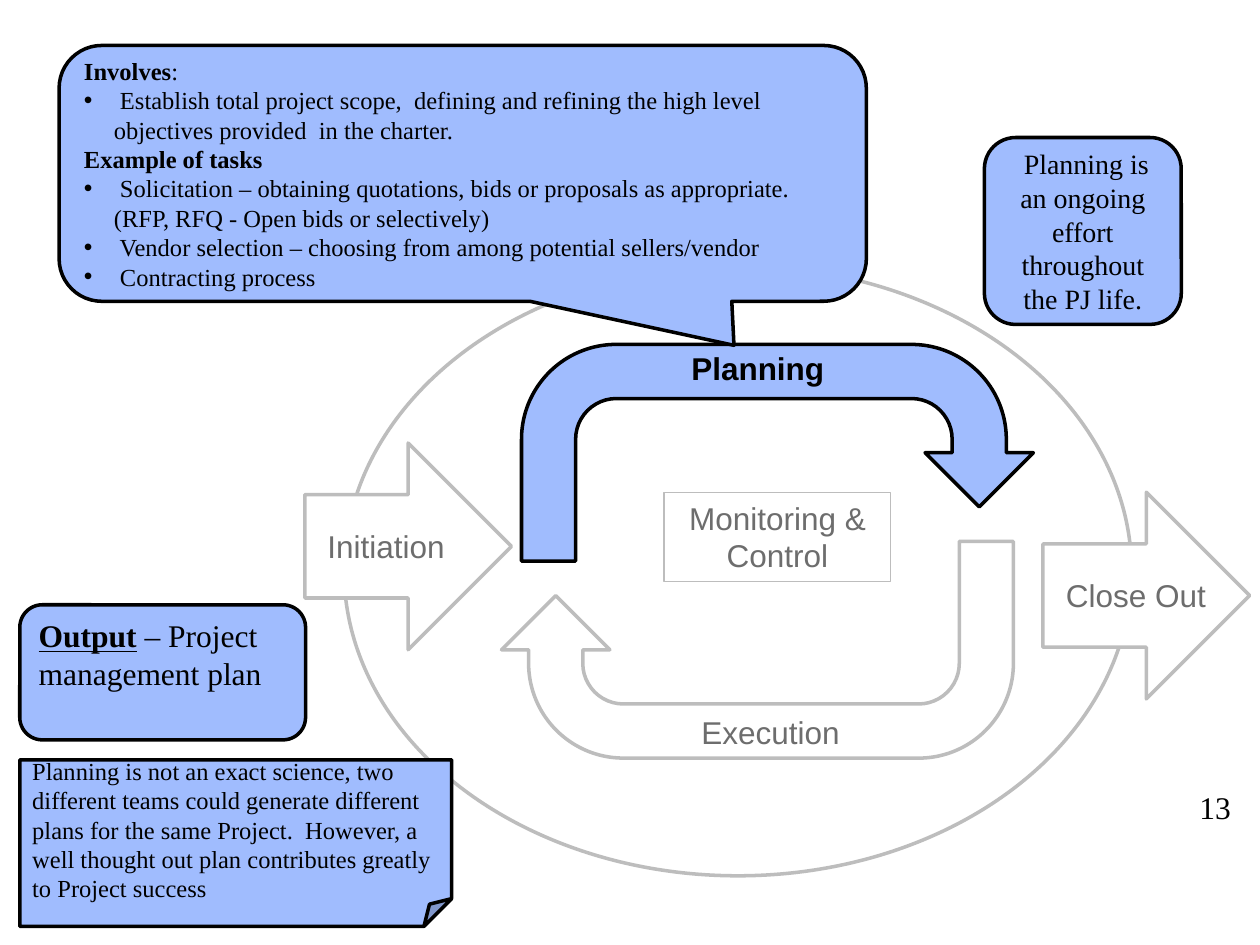
"""Builds the project planning phase slide."""
from dataclasses import dataclass

from lxml import etree
from pptx import Presentation
from pptx.dml.color import RGBColor
from pptx.enum.shapes import MSO_SHAPE
from pptx.enum.text import MSO_ANCHOR, PP_ALIGN
from pptx.oxml.ns import qn
from pptx.util import Pt

ELLIPSE = MSO_SHAPE.OVAL
BRACKETS = MSO_SHAPE.DOUBLE_BRACKET
U_TURN = MSO_SHAPE.U_TURN_ARROW
RIGHT_ARROW = MSO_SHAPE.RIGHT_ARROW
RECTANGLE = MSO_SHAPE.RECTANGLE
ROUNDED = MSO_SHAPE.ROUNDED_RECTANGLE
CALLOUT = MSO_SHAPE.ROUNDED_RECTANGULAR_CALLOUT
FOLDED = MSO_SHAPE.FOLDED_CORNER
TOP, MIDDLE = MSO_ANCHOR.TOP, MSO_ANCHOR.MIDDLE
LEFT, CENTER = PP_ALIGN.LEFT, PP_ALIGN.CENTER


@dataclass(frozen=True)
class Theme:
    highlight: RGBColor = RGBColor(0xA0, 0xBC, 0xFE)
    white: RGBColor = RGBColor(0xFF, 0xFF, 0xFF)
    black: RGBColor = RGBColor(0, 0, 0)
    muted_line: RGBColor = RGBColor(0xBD, 0xBD, 0xBD)
    muted_text: RGBColor = RGBColor(0x6D, 0x6D, 0x6D)
    label_font: str = "Arial"
    note_font: str = "Times New Roman"
    large: int = 18
    medium: int = 16
    small: int = 14
    outline: float = 2
    thin_outline: float = 0.75
    bullet_indent: float = 17.1


THEME = Theme()


def add_outline(slide, kind, box, fill, line, width=THEME.outline):
    shape = slide.shapes.add_shape(kind, *map(Pt, box))
    shape.shadow.inherit = False
    if fill is None:
        shape.fill.background()
    else:
        shape.fill.solid()
        shape.fill.fore_color.rgb = fill
    if line is None:
        shape.line.fill.background()
    else:
        shape.line.color.rgb = line
        shape.line.width = Pt(width)
    return shape


def add_muted(slide, kind, box):
    return add_outline(slide, kind, box, THEME.white, THEME.muted_line)


def add_highlighted(slide, kind, box):
    return add_outline(slide, kind, box, THEME.highlight, THEME.black)


def add_run(paragraph, text, size, font, color, bold=False, underline=False):
    run = paragraph.add_run()
    run.text = text
    run.font.size = Pt(size)
    run.font.name = font
    run.font.color.rgb = color
    run.font.bold = bold
    run.font.underline = underline


def start_text(shape, anchor=TOP, align=LEFT):
    frame = shape.text_frame
    frame.word_wrap = True
    frame.vertical_anchor = anchor
    paragraph = frame.paragraphs[0]
    paragraph.alignment = align
    return paragraph


def add_label(slide, text, box, color=THEME.muted_text, bold=False):
    label = slide.shapes.add_textbox(*map(Pt, box))
    add_run(start_text(label), text, THEME.large, THEME.label_font, color, bold)


def add_note(slide, kind, box, runs, size, align=LEFT):
    note = add_highlighted(slide, kind, box)
    paragraph = start_text(note, MIDDLE, align)
    for text, emphasis in runs:
        add_run(paragraph, text, size, THEME.note_font, THEME.black, emphasis, emphasis)
    return note


def set_bullet(paragraph):
    properties = paragraph._p.get_or_add_pPr()
    indent = Pt(THEME.bullet_indent)
    properties.set("marL", str(indent))
    properties.set("indent", str(-indent))
    etree.SubElement(properties, qn("a:buFont"), typeface=THEME.label_font)
    etree.SubElement(properties, qn("a:buChar"), char="•")


def add_callout(slide, box, lines):
    callout = add_highlighted(slide, CALLOUT, box)
    for index, value in enumerate((0.336, 0.672, 0.167)):
        callout.adjustments[index] = value
    first = start_text(callout, MIDDLE)
    for index, (bulleted, runs) in enumerate(lines):
        paragraph = first if index == 0 else callout.text_frame.add_paragraph()
        paragraph.alignment = LEFT
        if bulleted:
            set_bullet(paragraph)
        for text, bold in runs:
            add_run(paragraph, text, THEME.small, THEME.note_font, THEME.black, bold)


def add_page_number(slide, text, box):
    number = add_outline(slide, BRACKETS, box, None, None)
    add_run(start_text(number), text, THEME.large, THEME.note_font, THEME.black)


def add_cycle(slide):
    add_muted(slide, ELLIPSE, (196.6, 152, 450, 348.5))
    add_page_number(slide, "13", (676.8, 445, 43.2, 31))
    add_highlighted(slide, U_TURN, (298, 196.8, 292.5, 123.8))
    add_label(slide, "Planning", (388, 196, 129.6, 29), THEME.black, True)
    execution = add_muted(slide, U_TURN, (286.6, 309.4, 292.5, 123.8))
    execution.rotation = 180
    add_label(slide, "Execution", (393.8, 404, 129.6, 29))
    for left, top in ((596, 281.3), (174.2, 253.2)):
        add_muted(slide, RIGHT_ARROW, (left, top, 118.1, 118.1))
    add_label(slide, "Initiation", (180, 297.4, 95.8, 29))
    add_label(slide, "Close Out", (602, 325.4, 112.3, 29))
    control = add_outline(slide, RECTANGLE, (379.5, 281.4, 129.6, 51),
                          None, THEME.muted_line, THEME.thin_outline)
    add_run(start_text(control, TOP, CENTER), "Monitoring & Control",
            THEME.large, THEME.label_font, THEME.muted_text)


def add_notes(slide):
    add_callout(slide, (33.8, 26, 461.3, 146.2), (
        (False, (("Involves", True), (":", False))),
        (True, ((" Establish total project scope,  defining and refining the high level "
                 "objectives provided  in the charter.", False),)),
        (False, (("Example of tasks", True),)),
        (True, ((" Solicitation – obtaining quotations, bids or proposals as appropriate. "
                 "(RFP, RFQ - Open bids or selectively)", False),)),
        (True, ((" Vendor selection – choosing from among potential sellers/vendor", False),)),
        (True, ((" Contracting process", False),)),
    ))
    output = add_note(slide, ROUNDED, (11.3, 345.6, 163.3, 77.2),
                      (("Output", True), (" – Project management plan", False)), THEME.large)
    output.text_frame.margin_bottom = Pt(24.3)
    add_note(slide, ROUNDED, (562.5, 78.6, 112.5, 106.8),
             ((" Planning is an ongoing effort throughout the PJ life.", False),),
             THEME.medium, CENTER)
    add_note(slide, FOLDED, (11.3, 434.2, 246.8, 95.2),
             (("Planning is not an exact science, two different teams could generate "
               "different plans for the same Project.  However, a well thought out plan "
               "contributes greatly to Project success", False),), THEME.small)


def main():
    presentation = Presentation()
    presentation.slide_width = Pt(720)
    presentation.slide_height = Pt(540)
    slide = presentation.slides.add_slide(presentation.slide_layouts[6])
    add_cycle(slide)
    add_notes(slide)
    presentation.save("out.pptx")


if __name__ == "__main__":
    main()
